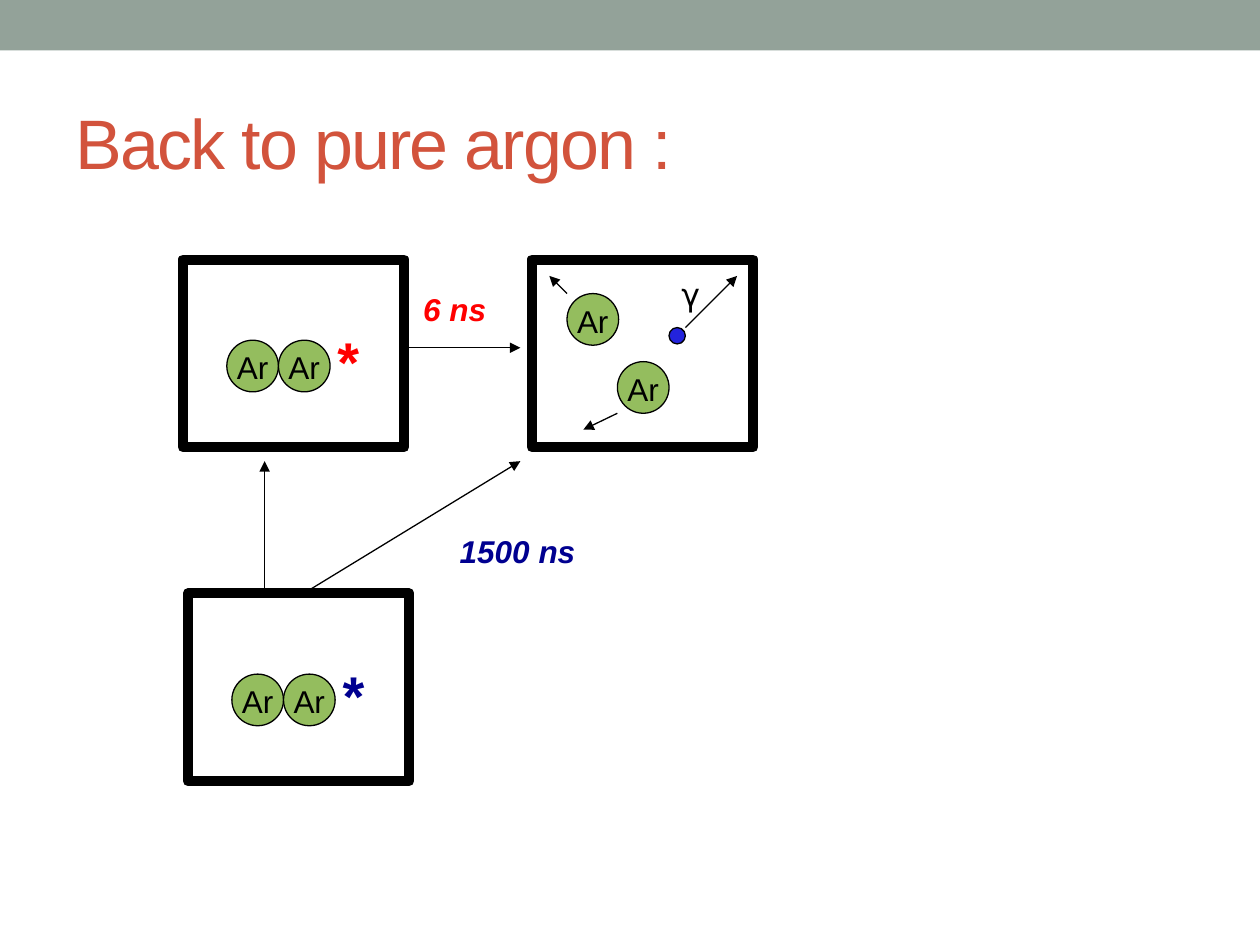
from dataclasses import dataclass

from lxml import etree
from pptx import Presentation
from pptx.dml.color import RGBColor
from pptx.enum.shapes import MSO_CONNECTOR, MSO_SHAPE
from pptx.enum.text import MSO_ANCHOR, MSO_AUTO_SIZE, PP_ALIGN
from pptx.oxml.ns import qn
from pptx.util import Inches, Pt

RECTANGLE, OVAL = MSO_SHAPE.RECTANGLE, MSO_SHAPE.OVAL
STRAIGHT = MSO_CONNECTOR.STRAIGHT
TOP, MIDDLE = MSO_ANCHOR.TOP, MSO_ANCHOR.MIDDLE
CENTER = PP_ALIGN.CENTER
GROW = MSO_AUTO_SIZE.SHAPE_TO_FIT_TEXT


@dataclass(frozen=True)
class Theme:
    font: str = "Arial"
    greek_font: str = "DejaVu Sans"
    band: str = "93A299"
    title: str = "D2533C"
    ink: str = "000000"
    paper: str = "FFFFFF"
    atom: str = "94BD5E"
    photon: str = "2323DC"
    fast: str = "FF0000"
    slow: str = "000090"
    title_size: float = 40
    star_size: float = 32
    label_size: float = 18
    thin: float = 0.75
    thick: float = 5.67


THEME = Theme()
ATOM_SIZE = 0.41


def rgb(value):
    return RGBColor.from_string(value)


def add_solid(slide, kind, left, top, width, height, fill, line_width=None):
    """Add a filled shape, outlined in ink when a line width is given."""
    solid = slide.shapes.add_shape(
        kind, Inches(left), Inches(top), Inches(width), Inches(height))
    solid.shadow.inherit = False
    solid.fill.solid()
    solid.fill.fore_color.rgb = rgb(fill)
    if line_width is None:
        solid.line.fill.background()
    else:
        solid.line.color.rgb = rgb(THEME.ink)
        solid.line.width = Pt(line_width)
    return solid


def write(frame, text, size, color, font=THEME.font, bold=False, italic=False):
    paragraph = frame.paragraphs[0]
    paragraph.text = text
    run = paragraph.runs[0]
    run.font.name = font
    run.font.size = Pt(size)
    run.font.bold = bold
    run.font.italic = italic
    run.font.color.rgb = rgb(color)
    return run


def add_label(slide, text, left, top, width, height, size, color,
              anchor=TOP, inset_top=0.05, **style):
    label = slide.shapes.add_textbox(
        Inches(left), Inches(top), Inches(width), Inches(height))
    frame = label.text_frame
    frame.word_wrap = True
    frame.vertical_anchor = anchor
    frame.margin_top = Inches(inset_top)
    write(frame, text, size, color, **style)
    return frame


def add_title(slide, text):
    frame = add_label(slide, text, 0.5, 0.58, 9, 1.08,
                      THEME.title_size, THEME.title, anchor=MIDDLE)
    frame.paragraphs[0].runs[0].font._element.set("spc", "-100")


def add_lifetime(slide, text, left, top, width, color):
    frame = add_label(slide, text, left, top, width, 0.4,
                      THEME.label_size, color, bold=True, italic=True)
    frame.auto_size = GROW


def add_arrow(slide, start, end):
    arrow = slide.shapes.add_connector(
        STRAIGHT, *(Inches(value) for value in (*start, *end)))
    arrow.line.color.rgb = rgb(THEME.ink)
    arrow.line.width = Pt(THEME.thin)
    etree.SubElement(arrow.line._get_or_add_ln(), qn("a:tailEnd"), type="triangle")
    etree.SubElement(arrow._element.spPr, qn("a:effectLst"))


def add_atom(slide, left, top):
    atom = add_solid(slide, OVAL, left, top, ATOM_SIZE, ATOM_SIZE,
                     THEME.atom, THEME.thin)
    frame = atom.text_frame
    frame.word_wrap = False
    frame.vertical_anchor = MIDDLE
    frame.margin_top = Inches(0.07)
    write(frame, "Ar", THEME.label_size, THEME.ink)
    frame.paragraphs[0].alignment = CENTER


def add_chamber(slide, left, top):
    add_solid(slide, RECTANGLE, left, top, 1.76, 1.49, THEME.paper, THEME.thick)


def add_excited_dimer(slide, left, top, star_color):
    """Add a chamber holding two touching atoms marked with a star."""
    add_chamber(slide, left, top)
    for index in range(2):
        add_atom(slide, left + 0.35 + index * ATOM_SIZE, top + 0.64)
    add_label(slide, "*", left + 1.13, top + 0.45, 0.68, 0.53,
              THEME.star_size, star_color, inset_top=0.08, bold=True)


def add_decay_products(slide, left, top):
    """Add a chamber with two atoms and a photon flying apart."""
    add_chamber(slide, left, top)
    add_atom(slide, left + 0.68, top + 0.81)
    add_atom(slide, left + 0.28, top + 0.27)
    add_solid(slide, OVAL, left + 1.09, top + 0.54, 0.13, 0.13,
              THEME.photon, THEME.thin)
    flights = [((0.28, 0.27), (0.14, 0.13)),
               ((0.68, 1.22), (0.41, 1.35)),
               ((1.22, 0.54), (1.63, 0.13))]
    for start, end in flights:
        add_arrow(slide, (left + start[0], top + start[1]),
                  (left + end[0], top + end[1]))
    gamma = add_label(slide, "γ", left + 1.09, top + 0.14, 0.68, 0.05,
                      THEME.label_size, THEME.ink, font=THEME.greek_font)
    gamma.paragraphs[0].line_spacing = 0.98


def main():
    deck = Presentation()
    deck.slide_width, deck.slide_height = Inches(10), Inches(7.5)
    slide = deck.slides.add_slide(deck.slide_layouts[6])

    add_solid(slide, RECTANGLE, 0, 0, 10, 0.4, THEME.band)
    add_title(slide, "Back to pure argon :")

    add_excited_dimer(slide, 1.45, 2.06, THEME.fast)
    add_decay_products(slide, 4.22, 2.06)
    add_arrow(slide, (3.22, 2.76), (4.13, 2.76))
    add_lifetime(slide, "6 ns", 3.26, 2.25, 0.99, THEME.fast)

    add_excited_dimer(slide, 1.49, 4.71, THEME.slow)
    add_arrow(slide, (2.41, 4.71), (4.13, 3.66))
    add_lifetime(slide, "1500 ns", 3.55, 4.17, 1.61, THEME.slow)
    add_arrow(slide, (2.1, 4.69), (2.1, 3.66))

    deck.save("out.pptx")


if __name__ == "__main__":
    main()
